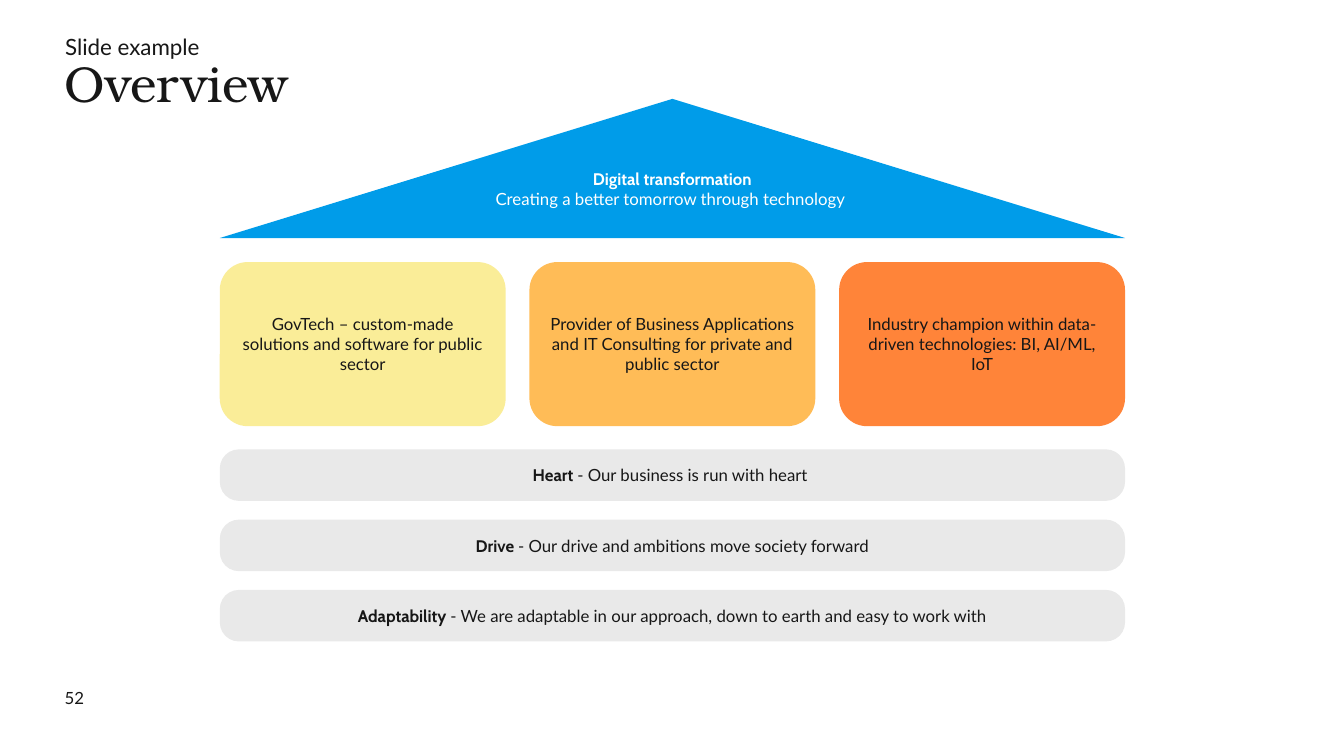
from dataclasses import dataclass

from pptx import Presentation
from pptx.dml.color import RGBColor
from pptx.enum.shapes import MSO_SHAPE as Shape
from pptx.enum.text import MSO_ANCHOR as Anchor, MSO_AUTO_SIZE as AutoSize, PP_ALIGN as Align
from pptx.shapes.autoshape import Shape as AutoShape
from pptx.text.text import TextFrame
from pptx.util import Pt


@dataclass(frozen=True)
class Theme:
    ink: str = "171717"
    white: str = "FFFFFF"
    roof: str = "009CE9"
    value: str = "E9E9E9"
    pillars: tuple[str, ...] = ("FAED98", "FFBC57", "FF8439")
    body_font: str = "Lato"
    bold_font: str = "Cabin"
    title_font: str = "TeX Gyre Bonum"
    body_size: float = 12
    kicker_size: float = 16
    title_size: float = 36


THEME = Theme()


@dataclass(frozen=True)
class Words:
    text: str
    bold: bool = False
    color: str = THEME.ink
    size: float = THEME.body_size
    font: str = THEME.body_font


@dataclass(frozen=True)
class Box:
    left: float
    top: float
    width: float
    height: float

    def lengths(self) -> tuple[Pt, Pt, Pt, Pt]:
        return Pt(self.left), Pt(self.top), Pt(self.width), Pt(self.height)


@dataclass(frozen=True)
class Block:
    kind: Shape
    box: Box
    fill: str
    lines: list[list[Words]]
    margins: tuple[float, float]
    anchor: Anchor = Anchor.MIDDLE
    rounding: float | None = None


def write(frame: TextFrame, lines: list[list[Words]], align: Align,
          margins: tuple[float, float] = (0, 0), anchor: Anchor = Anchor.TOP,
          spacing: float | Pt | None = None) -> None:
    frame.word_wrap = True
    frame.auto_size = AutoSize.NONE
    frame.vertical_anchor = anchor
    frame.margin_left = frame.margin_right = Pt(margins[0])
    frame.margin_top = frame.margin_bottom = Pt(margins[1])
    for index, line in enumerate(lines):
        paragraph = frame.add_paragraph() if index else frame.paragraphs[0]
        paragraph.alignment = align
        if spacing is not None:
            paragraph.line_spacing = spacing
        for words in line:
            run = paragraph.add_run()
            run.text = words.text
            run.font.name = THEME.bold_font if words.bold else words.font
            run.font.size = Pt(words.size)
            run.font.bold = words.bold
            run.font.color.rgb = RGBColor.from_string(words.color)


def draw_block(shapes, block: Block) -> AutoShape:
    shape = shapes.add_shape(block.kind, *block.box.lengths())
    shape.shadow.inherit = False
    shape.fill.solid()
    shape.fill.fore_color.rgb = RGBColor.from_string(block.fill)
    shape.line.fill.background()
    if block.rounding is not None:
        shape.adjustments[0] = block.rounding
    write(shape.text_frame, block.lines, Align.CENTER, block.margins, block.anchor)
    return shape


def add_label(slide, box: Box, words: Words, spacing: float | None = None) -> None:
    label = slide.shapes.add_textbox(*box.lengths())
    write(label.text_frame, [[words]], Align.LEFT, spacing=spacing)


# House geometry
HOUSE_LEFT, HOUSE_WIDTH = 157, 646.6
PILLAR_TOP, PILLAR_HEIGHT, PILLAR_GAP = 187.2, 117.2, 17
VALUE_TOP, VALUE_HEIGHT, VALUE_STEP = 321, 36.8, 50.2

PILLARS = [
    "GovTech – custom-made solutions and software for public sector",
    "Provider of Business Applications and IT Consulting for private and public sector",
    "Industry champion within data-driven technologies: BI, AI/ML, IoT",
]
VALUES = [
    ("Heart ", "- Our business is run with heart "),
    ("Drive ", "- Our drive and ambitions move society forward"),
    ("Adaptability ", "- We are adaptable in our approach, down to earth and easy to work with"),
]


def main() -> None:
    presentation = Presentation()
    presentation.slide_width, presentation.slide_height = Pt(960), Pt(540)
    slide = presentation.slides.add_slide(presentation.slide_layouts[5])

    # Headings and page number
    title = slide.shapes.title
    title.left, title.top, title.width, title.height = Box(46.2, 37.4, 867.6, 68.4).lengths()
    write(title.text_frame,
          [[Words("Overview", size=THEME.title_size, font=THEME.title_font)]],
          Align.LEFT, spacing=Pt(43.2))
    add_label(slide, Box(46.6, 21.6, 867, 15.8),
              Words("Slide example", size=THEME.kicker_size), spacing=1.1)
    add_label(slide, Box(46.2, 491, 73.4, 14.4), Words("52"))

    # Roof
    draw_block(slide.shapes, Block(
        Shape.FLOWCHART_EXTRACT, Box(HOUSE_LEFT, 70.6, HOUSE_WIDTH, 99.4), THEME.roof,
        [[Words("Digital transformation", bold=True, color=THEME.white)],
         [Words("Creating a better tomorrow through technology ", color=THEME.white)]],
        margins=(14.4, 0), anchor=Anchor.TOP))

    # Value bars
    for index, (name, meaning) in enumerate(VALUES):
        box = Box(HOUSE_LEFT, VALUE_TOP + index * VALUE_STEP, HOUSE_WIDTH, VALUE_HEIGHT)
        draw_block(slide.shapes, Block(
            Shape.ROUNDED_RECTANGLE, box, THEME.value,
            [[Words(name, bold=True), Words(meaning)]],
            margins=(14.4, 14.4), rounding=0.37))

    # Pillars
    pillar_group = slide.shapes.add_group_shape()
    pillar_width = (HOUSE_WIDTH - PILLAR_GAP * (len(PILLARS) - 1)) / len(PILLARS)
    for index, (text, fill) in enumerate(zip(PILLARS, THEME.pillars)):
        left = HOUSE_LEFT + index * (pillar_width + PILLAR_GAP)
        draw_block(pillar_group.shapes, Block(
            Shape.ROUNDED_RECTANGLE, Box(left, PILLAR_TOP, pillar_width, PILLAR_HEIGHT),
            fill, [[Words(text)]], margins=(7.2, 7.2), rounding=0.17))

    presentation.save("out.pptx")


if __name__ == "__main__":
    main()
